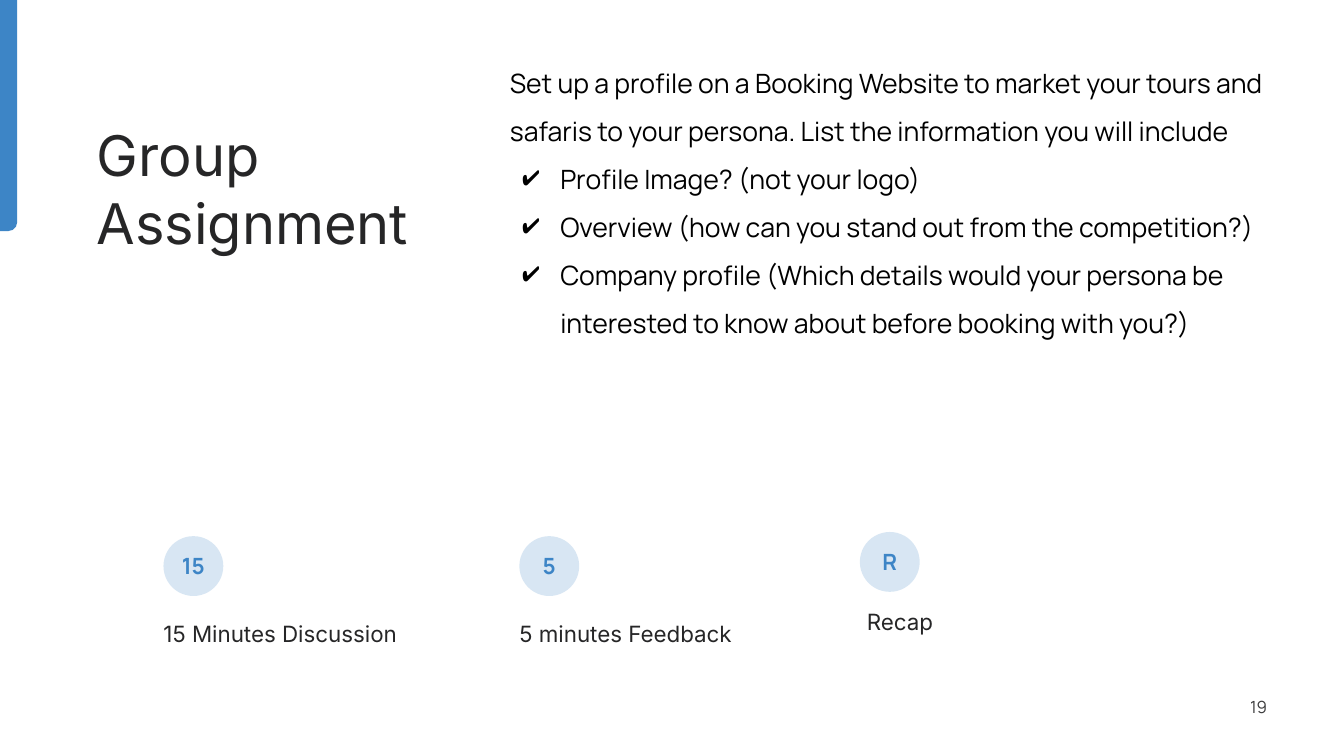
from lxml import etree
from pptx import Presentation
from pptx import util as u
from pptx.dml.color import RGBColor
from pptx.enum import shapes, text
from pptx.oxml import ns

BLUE, INK, GREY, BLACK = "3D85C6", "262627", "3B3B3C", "000000"
ALIGN = text.PP_ALIGN
MIDDLE = text.MSO_ANCHOR.MIDDLE


def colour(value):
    return RGBColor.from_string(value)


class SlideBuilder:
    heading_font = "Inter"
    body_font = "Manrope"

    def __init__(self, slide):
        self.slide = slide

    def frame(self, shape, insets=(0, 0), anchor=text.MSO_ANCHOR.TOP):
        """Set wrapping, side and top/bottom insets, and anchor."""
        frame = shape.text_frame
        frame.word_wrap = True
        frame.margin_left = frame.margin_right = u.Pt(insets[0])
        frame.margin_top = frame.margin_bottom = u.Pt(insets[1])
        frame.vertical_anchor = anchor
        return frame

    def add_words(self, paragraph, lines, size, font, ink, bold=False,
                  align=ALIGN.LEFT, spacing=1.0):
        paragraph.alignment = align
        paragraph.line_spacing = spacing
        for index, line in enumerate(lines.split("\n")):
            if index:
                paragraph.add_line_break()
            run = paragraph.add_run()
            run.text = line
            run.font.size = u.Pt(size)
            run.font.name = font
            run.font.bold = bold
            run.font.color.rgb = colour(ink)

    def box(self, left, top, width, height, **layout):
        shape = self.slide.shapes.add_textbox(*map(u.Pt, (left, top, width, height)))
        return self.frame(shape, **layout)

    def shape(self, kind, left, top, width, height, fill, opacity=100):
        shape = self.slide.shapes.add_shape(kind, *map(u.Pt, (left, top, width, height)))
        shape.shadow.inherit = False
        shape.line.fill.background()
        shape.fill.solid()
        shape.fill.fore_color.rgb = colour(fill)
        if opacity < 100:
            fill_colour = next(shape._element.spPr.iter(ns.qn("a:srgbClr")))
            etree.SubElement(fill_colour, ns.qn("a:alpha"), val=str(opacity * 1000))
        return shape

    def check_mark(self, paragraph):
        properties = paragraph._p.get_or_add_pPr()
        properties.set("marL", str(u.Pt(36)))
        properties.set("indent", str(u.Pt(-27)))
        bullet_colour = etree.SubElement(properties, ns.qn("a:buClr"))
        etree.SubElement(bullet_colour, ns.qn("a:srgbClr"), val=BLACK)
        etree.SubElement(properties, ns.qn("a:buChar"), char="✔")

    def badge(self, left, top, label):
        circle = self.shape(shapes.MSO_SHAPE.OVAL, left, top, 42.75, 42.75, BLUE, opacity=20)
        frame = self.frame(circle, insets=(0, 3.6), anchor=MIDDLE)
        self.add_words(frame.paragraphs[0], label, 16, self.body_font, BLUE,
                       bold=True, align=ALIGN.CENTER)

    def caption(self, left, top, words):
        frame = self.box(left, top, 196, 20)
        self.add_words(frame.paragraphs[0], words, 16, self.heading_font, INK, spacing=1.3)


def main():
    presentation = Presentation()
    presentation.slide_width, presentation.slide_height = u.Pt(960), u.Pt(540)
    slide = presentation.slides.add_slide(presentation.slide_layouts[6])
    builder = SlideBuilder(slide)

    # Accent bar, rounded at its lower right corner
    bar = builder.shape(shapes.MSO_SHAPE.ROUND_1_RECTANGLE, 0, 0, 12.24, 165, BLUE)
    bar.adjustments[0] = 0.5
    bar.rotation = 180
    bar._element.spPr.find(ns.qn("a:xfrm")).set("flipH", "1")

    # Title
    title = builder.box(69.1, 86.4, 437, 97.2)
    builder.add_words(title.paragraphs[0], "Group\nAssignment", 40, builder.heading_font, INK)

    # Task and checklist
    task = builder.box(357.1, 29.5, 566, 314, insets=(7.2, 7.2))
    builder.add_words(
        task.paragraphs[0],
        "Set up a profile on a Booking Website to market your tours and safaris "
        "to your persona. List the information you will include",
        19, builder.body_font, BLACK, spacing=1.5)
    for item in (
        "Profile Image? (not your logo)",
        "Overview (how can you stand out from the competition?)",
        "Company profile (Which details would your persona be interested "
        "to know about before booking with you?)",
    ):
        paragraph = task.add_paragraph()
        builder.check_mark(paragraph)
        builder.add_words(paragraph, item, 19, builder.body_font, BLACK, spacing=1.5)

    # Timed steps: badge place and label, caption place and words
    for badge_left, badge_top, label, left, top, words in (
        (116.8, 383, "15", 116.8, 437, "15 Minutes Discussion"),
        (371, 383, "5", 371, 437, "5 minutes Feedback"),
        (614.2, 380, "R", 619.2, 428.4, "Recap"),
    ):
        builder.badge(badge_left, badge_top, label)
        builder.caption(left, top, words)

    # Page number
    page = builder.box(869.8, 490.3, 35.3, 28.8, insets=(0, 3.6), anchor=MIDDLE)
    builder.add_words(page.paragraphs[0], "19", 12, builder.body_font, GREY, align=ALIGN.RIGHT)

    presentation.save("out.pptx")


if __name__ == "__main__":
    main()
